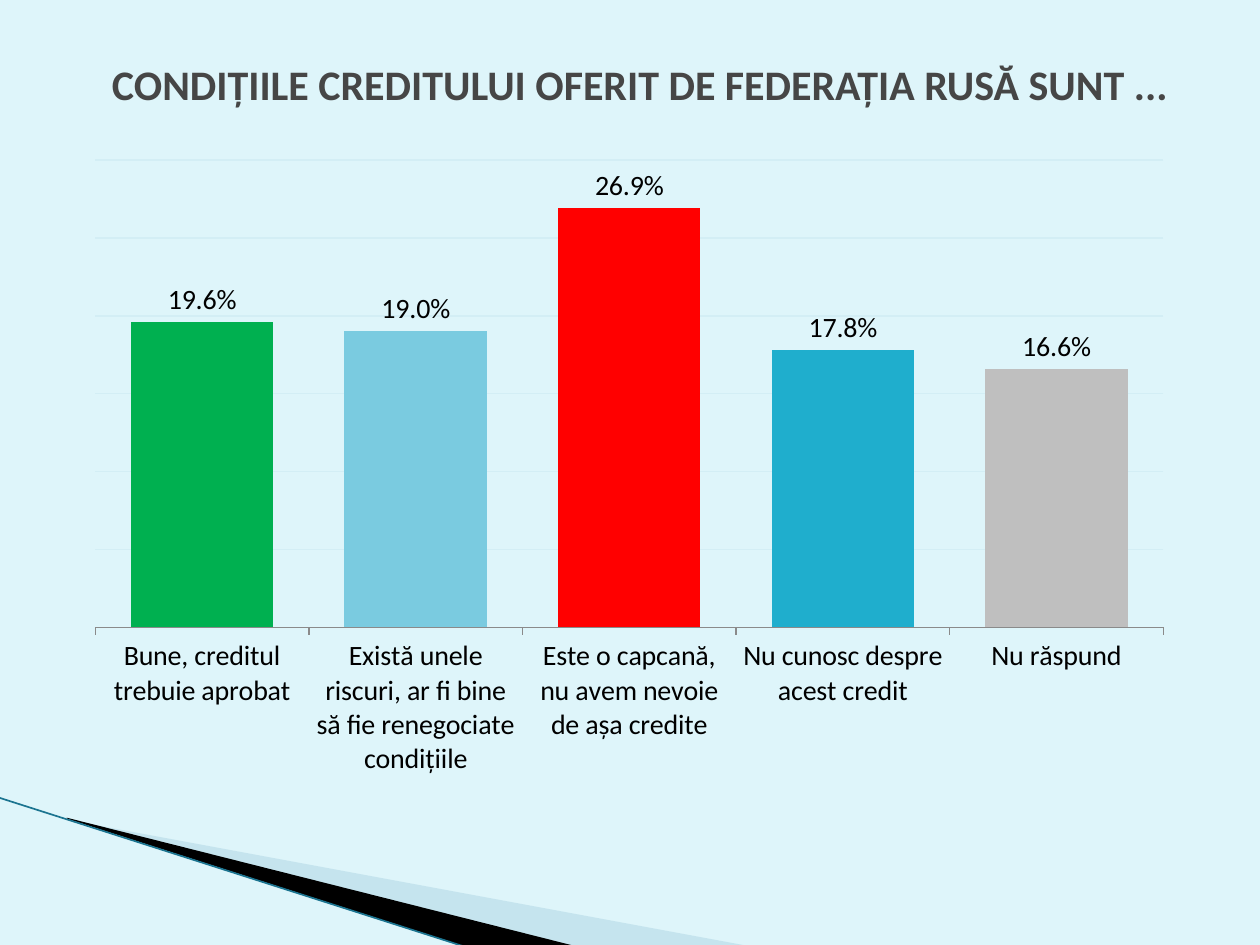
from dataclasses import dataclass

from lxml import etree
from pptx import Presentation
from pptx import util as u
from pptx.chart.data import CategoryChartData
from pptx.dml.color import RGBColor
from pptx.enum import chart as charts, shapes, text
from pptx.oxml import parse_xml
from pptx.oxml.ns import nsdecls, qn


@dataclass(frozen=True)
class Theme:
    font: str = "Calibri"
    title_size: float = 24
    chart_size: float = 16
    background: str = "DEF5FA"
    title: str = "464646"
    ink: str = "000000"
    wedge: str = "A0CBDC"
    edge: str = "1B7490"
    grid: str = "D3EEF5"
    axis: str = "8A8A8A"
    bars: tuple = ("00B050", "7ACBE0", "FF0000", "1FAECD", "BFBFBF")


class SlideBuilder:
    """Draw styled elements on one slide, placed on a grid of 100 columns by 100 rows."""

    def __init__(self, presentation, theme):
        self.theme = theme
        self.column = presentation.slide_width / 100
        self.row = presentation.slide_height / 100
        self.slide = presentation.slides.add_slide(presentation.slide_layouts[5])
        self.paint(self.slide.background.fill, theme.background)

    def point(self, column, row):
        return round(column * self.column), round(row * self.row)

    def box(self, column, row, columns, rows):
        return *self.point(column, row), *self.point(columns, rows)

    def paint(self, fill, color):
        fill.solid()
        fill.fore_color.rgb = RGBColor.from_string(color)

    def stroke(self, line, color, width):
        self.paint(line.fill, color)
        line.width = u.Pt(width)

    def style(self, target, **formats):
        for name, value in formats.items():
            setattr(target, name, value)

    def type(self, font, size, color, bold=False):
        self.style(font, name=self.theme.font, size=u.Pt(size), bold=bold)
        font.color.rgb = RGBColor.from_string(color)

    def title(self, wording, *place):
        shape = self.slide.shapes.title
        left, top, width, height = self.box(*place)
        self.style(shape, left=left, top=top, width=width, height=height)
        frame = shape.text_frame
        self.style(frame, text=wording, word_wrap=True, vertical_anchor=text.MSO_ANCHOR.MIDDLE)
        paragraph = frame.paragraphs[0]
        paragraph.alignment = text.PP_ALIGN.CENTER
        self.type(paragraph.runs[0].font, self.theme.title_size, self.theme.title, bold=True)

    def wedge(self, corners, color, opacity=100):
        start, *rest = [self.point(*corner) for corner in corners]
        builder = self.slide.shapes.build_freeform(*start)
        builder.add_line_segments(rest, close=True)
        shape = builder.convert_to_shape()
        shape.shadow.inherit = False
        self.paint(shape.fill, color)
        shape.line.fill.background()
        if opacity < 100:
            tint = shape.fill._xPr.find(qn("a:solidFill"))[0]
            etree.SubElement(tint, qn("a:alpha"), val=str(opacity * 1000))

    def line(self, start, end, color, width):
        connector = self.slide.shapes.add_connector(
            shapes.MSO_CONNECTOR.STRAIGHT, *self.point(*start), *self.point(*end))
        self.stroke(connector.line, color, width)
        etree.SubElement(connector._element.spPr, qn("a:effectLst"))

    def column_chart(self, answers, plot, *place):
        data = CategoryChartData(number_format="0.0%")
        data.categories = list(answers)
        data.add_series("Series 1", list(answers.values()))
        chart = self.slide.shapes.add_chart(
            charts.XL_CHART_TYPE.COLUMN_CLUSTERED, *self.box(*place), data).chart
        self.style(chart, has_legend=False, has_title=False)
        self.type(chart.font, self.theme.chart_size, self.theme.ink)
        self.place_plot(chart, plot)
        self.style_axes(chart)
        bars = chart.plots[0]
        self.style(bars, gap_width=50, vary_by_categories=False, has_data_labels=True)
        self.style(bars.data_labels, show_value=True, number_format="0.0%",
                   number_format_is_linked=False,
                   position=charts.XL_LABEL_POSITION.OUTSIDE_END)
        for index, color in enumerate(self.theme.bars):
            self.paint(bars.series[0].points[index].format.fill, color)

    def place_plot(self, chart, plot):
        sizes = "".join(f'<c:{name} val="{share}"/>' for name, share in zip("xywh", plot))
        area = chart._chartSpace.chart.plotArea
        for layout in area.findall(qn("c:layout")):
            area.remove(layout)
        area.insert(0, parse_xml(
            f'<c:layout {nsdecls("c")}><c:manualLayout><c:layoutTarget val="inner"/>'
            f'<c:xMode val="edge"/><c:yMode val="edge"/>{sizes}</c:manualLayout></c:layout>'))

    def style_axes(self, chart):
        self.style(chart.value_axis, minimum_scale=0, maximum_scale=0.3, major_unit=0.05,
                   has_major_gridlines=True, visible=False)
        self.stroke(chart.value_axis.major_gridlines.format.line, self.theme.grid, 0.75)
        self.style(chart.category_axis, has_major_gridlines=False,
                   major_tick_mark=charts.XL_TICK_MARK.OUTSIDE)
        self.stroke(chart.category_axis.format.line, self.theme.axis, 0.75)


def main():
    presentation = Presentation()
    presentation.slide_width, presentation.slide_height = u.Inches(10), u.Inches(7.5)
    theme = Theme()
    builder = SlideBuilder(presentation, theme)
    builder.wedge([(5.5, 86.8), (59.5, 100.13), (45.6, 100.13), (5.5, 86.67)], theme.wedge, 40)
    builder.wedge([(5.3, 86.53), (45.7, 100.13), (37.2, 100.27), (5.4, 86.67)], theme.ink)
    builder.line((-0.1, 84.4), (37.1, 100.27), theme.edge, 0.95)
    builder.title("CONDIȚIILE CREDITULUI OFERIT DE FEDERAȚIA RUSĂ SUNT ...", 5.8, 3.33, 90, 11.07)
    answers = {
        "Bune, creditul trebuie aprobat": 0.196,
        "Există unele riscuri, ar fi bine să fie renegociate condițiile": 0.19,
        "Este o capcană, nu avem nevoie de așa credite": 0.269,
        "Nu cunosc despre acest credit": 0.178,
        "Nu răspund": 0.166,
    }
    builder.column_chart(answers, (0.02, 0.02, 0.96, 0.73), 5.8, 15.6, 88.3, 67.73)
    presentation.save("out.pptx")


if __name__ == "__main__":
    main()
